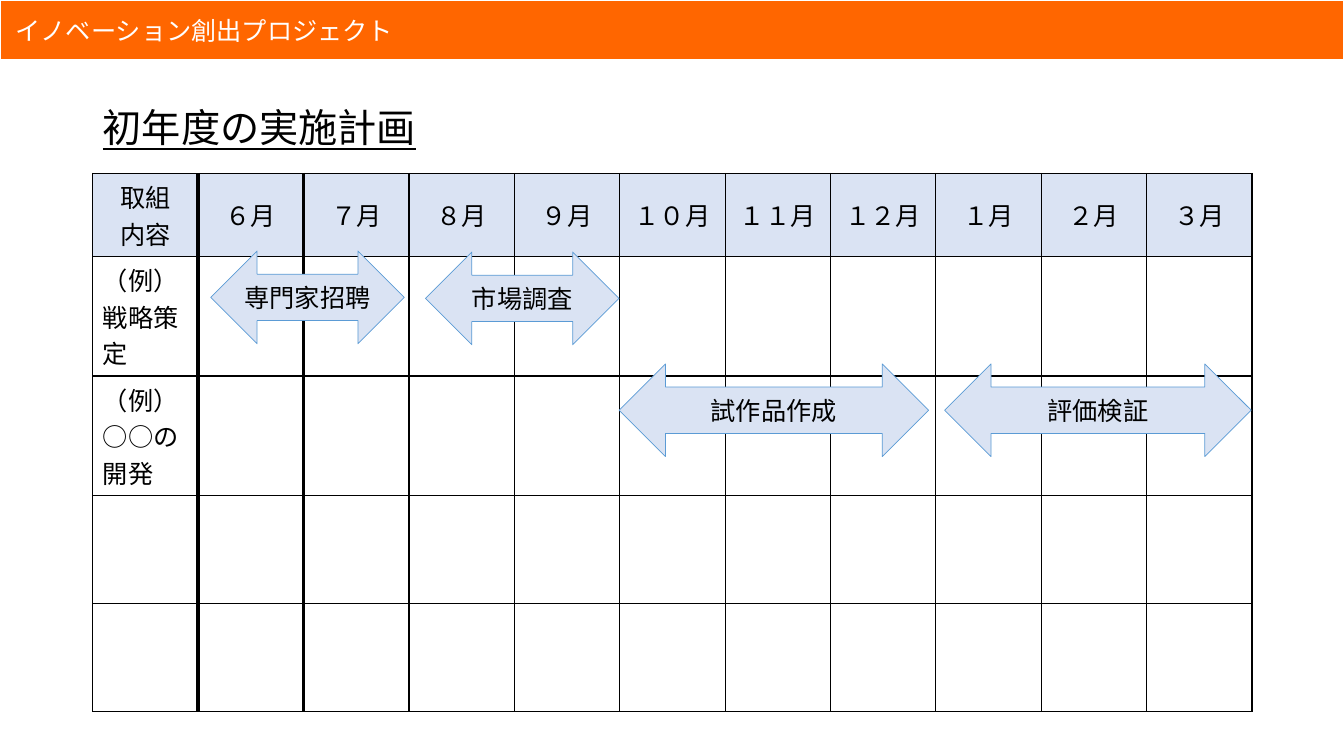
from lxml.etree import SubElement
from pptx import Presentation
from pptx.dml.color import RGBColor
from pptx.enum.shapes import MSO_SHAPE as Preset
from pptx.enum.text import MSO_ANCHOR as Anchor, PP_ALIGN as Align
from pptx.oxml.ns import qn
from pptx.util import Inches, Pt

FONT = "Noto Sans CJK JP"
BLACK, WHITE, ORANGE = "000000", "FFFFFF", "FF6600"
PALE_BLUE, EDGE_BLUE = "DAE3F3", "5B9BD5"

MONTHS = ["６月", "７月", "８月", "９月", "１０月", "１１月", "１２月", "１月", "２月", "３月"]
ACTIVITIES = ["（例）\n戦略策定", "（例）○○の開発", "", ""]
PERIODS = [
    ("試作品作成", 5.22, 1.89, 3.07),
    ("評価検証", 8.45, 1.89, 3.04),
    ("専門家招聘", 1.17, 0.77, 1.92),
    ("市場調査", 3.3, 0.78, 1.92),
]


def color(hex_value):
    return RGBColor.from_string(hex_value)


def style_text(frame, size, ink, align):
    for paragraph in frame.paragraphs:
        paragraph.alignment = align
        paragraph.font.size = Pt(size)
        paragraph.font.name = FONT
        paragraph.font.color.rgb = color(ink)
        defaults = paragraph._p.get_or_add_pPr().get_or_add_defRPr()
        SubElement(defaults, qn("a:ea"), typeface=FONT)


def add_block(slide, preset, box, text, fill, edge, edge_width, ink, align):
    block = slide.shapes.add_shape(preset, *map(Inches, box))
    block.shadow.inherit = False
    block.fill.solid()
    block.fill.fore_color.rgb = color(fill)
    block.line.color.rgb = color(edge)
    block.line.width = Pt(edge_width)
    block.text_frame.text = text
    block.text_frame.vertical_anchor = Anchor.MIDDLE
    style_text(block.text_frame, 18, ink, align)


def add_banner(slide, box):
    add_block(slide, Preset.RECTANGLE, box, " イノベーション創出プロジェクト",
              ORANGE, WHITE, 1.5, WHITE, Align.LEFT)


def add_heading(slide, box):
    heading = slide.shapes.title
    heading.left, heading.top, heading.width, heading.height = map(Inches, box)
    frame = heading.text_frame
    frame.text = "初年度の実施計画"
    frame.vertical_anchor = Anchor.MIDDLE
    style_text(frame, 28, BLACK, Align.LEFT)
    frame.paragraphs[0].font.underline = True
    frame.paragraphs[0].line_spacing = 0.9


def set_borders(cell, column):
    thick_sides = {0: ["R"], 1: ["L", "R"], 2: ["L"]}.get(column, [])
    properties = cell._tc.get_or_add_tcPr()
    for side in "LRTB":
        width = Pt(3 if side in thick_sides else 1)
        border = SubElement(properties, qn(f"a:ln{side}"), w=str(width))
        paint = SubElement(border, qn("a:solidFill"))
        SubElement(paint, qn("a:srgbClr"), val=BLACK)


def add_schedule(slide, box):
    left, top, width, height = box
    rows = [["取組\n内容", *MONTHS]] + [[name] + [""] * len(MONTHS) for name in ACTIVITIES]
    schedule = slide.shapes.add_table(len(rows), len(rows[0]), *map(Inches, box)).table
    schedule.first_row = schedule.horz_banding = False
    header_height = 0.63
    for index, row in enumerate(schedule.rows):
        body_height = (height - header_height) / len(ACTIVITIES)
        row.height = Inches(body_height if index else header_height)
    for month in schedule.columns:
        month.width = Inches(width / len(rows[0]))
    for r, texts in enumerate(rows):
        for c, text in enumerate(texts):
            cell = schedule.cell(r, c)
            cell.text = text
            cell.vertical_anchor = Anchor.MIDDLE
            style_text(cell.text_frame, 18, BLACK, Align.LEFT if r else Align.CENTER)
            set_borders(cell, c)
            if r:
                cell.fill.background()
            else:
                cell.fill.solid()
                cell.fill.fore_color.rgb = color(PALE_BLUE)
    for text, start, drop, length in PERIODS:
        add_block(slide, Preset.LEFT_RIGHT_ARROW, (left + start, top + drop, length, 0.92),
                  text, PALE_BLUE, EDGE_BLUE, 0.5, BLACK, Align.CENTER)


def main():
    deck = Presentation()
    deck.slide_width, deck.slide_height = Inches(13.33), Inches(7.5)
    slide = deck.slides.add_slide(deck.slide_layouts[5])
    add_banner(slide, (0, 0, 13.33, 0.6))
    add_heading(slide, (0.92, 0.74, 11.5, 1.1))
    add_schedule(slide, (0.92, 1.72, 11.5, 4.91))
    deck.save("out.pptx")


if __name__ == "__main__":
    main()
